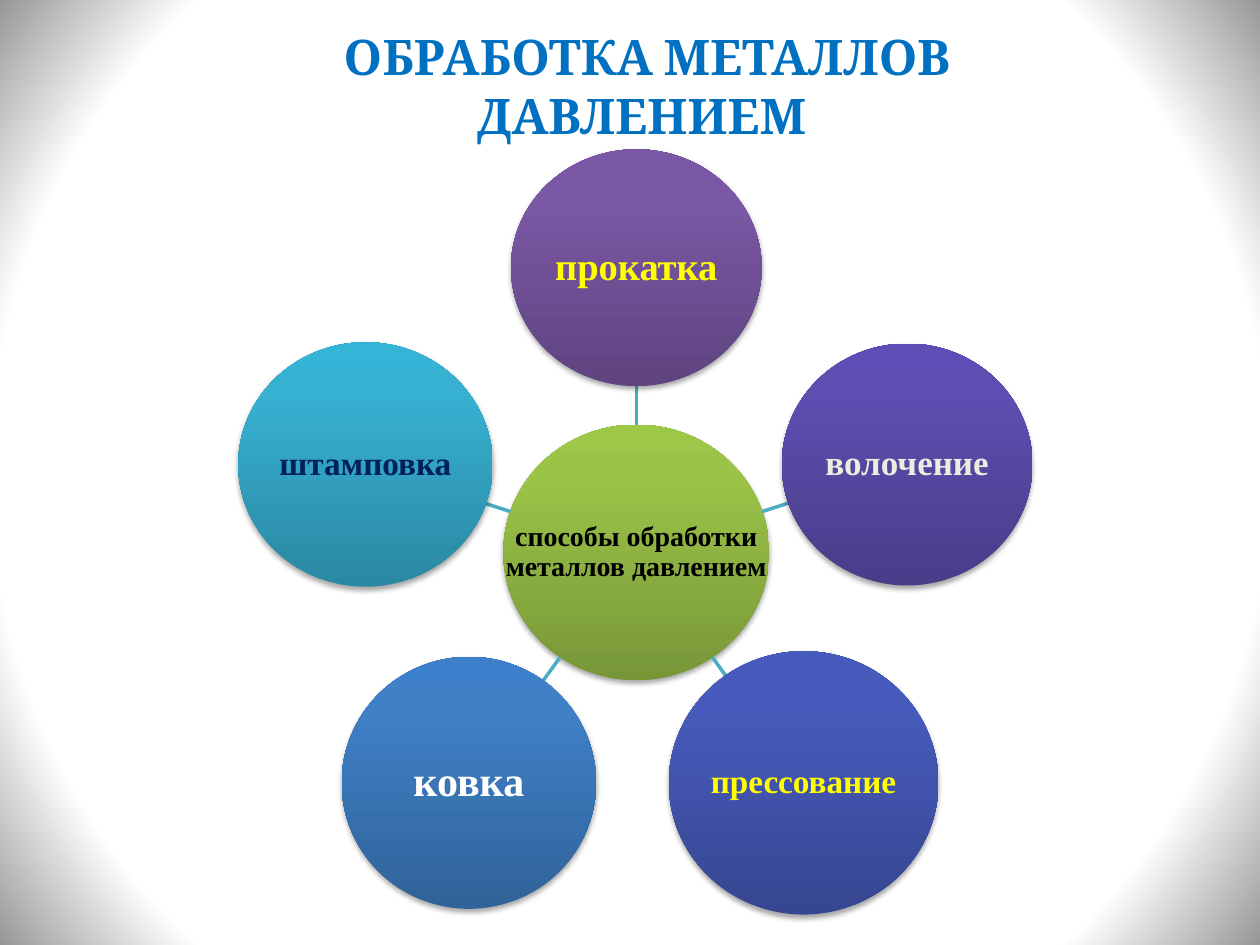
from math import cos, hypot, radians, sin

from lxml import etree
from pptx import Presentation
from pptx.dml.color import RGBColor
from pptx.enum.shapes import MSO_CONNECTOR, MSO_SHAPE
from pptx.enum.text import MSO_ANCHOR, PP_ALIGN
from pptx.oxml import parse_xml
from pptx.oxml.ns import nsdecls, qn
from pptx.util import Inches, Pt

OVAL = MSO_SHAPE.OVAL
STRAIGHT = MSO_CONNECTOR.STRAIGHT
CENTER = PP_ALIGN.CENTER
MIDDLE = MSO_ANCHOR.MIDDLE

BLUE = RGBColor(0x00, 0x70, 0xC0)
TEAL = RGBColor(0x4B, 0xAC, 0xC6)
YELLOW = RGBColor(0xFF, 0xFF, 0x00)
CREAM = RGBColor(0xEE, 0xEC, 0xE1)
NAVY = RGBColor(0x00, 0x20, 0x60)
BLACK = RGBColor(0x00, 0x00, 0x00)
WHITE = RGBColor(0xFF, 0xFF, 0xFF)
GREY = RGBColor(0x97, 0x97, 0x97)

GREENS = [RGBColor.from_string(c) for c in ("779737", "9BC348", "9DC746")]
PURPLES = [RGBColor.from_string(c) for c in ("5F4480", "7B58A6", "7C57A8")]
VIOLETS = [RGBColor.from_string(c) for c in ("483D89", "5D4FB1", "5C4EB4")]
INDIGOS = [RGBColor.from_string(c) for c in ("374691", "475BBC", "455ABF")]
BLUES = [RGBColor.from_string(c) for c in ("306399", "3F80C7", "3C80CB")]
CYANS = [RGBColor.from_string(c) for c in ("2A88A2", "37B1D2", "34B4D6")]

UPWARD = '<a:lin {} ang="16200000" scaled="0"/>'
RADIAL = ('<a:path {} path="circle"><a:fillToRect l="50000" t="50000" '
          'r="50000" b="50000"/></a:path>')
SHADOW = ('<a:outerShdw {} blurRad="39370" dist="22860" dir="5400000" '
          'rotWithShape="0"><a:srgbClr val="000000"><a:alpha val="35000"/>'
          '</a:srgbClr></a:outerShdw>')

HUB_CENTER = (5.05, 4.385)
HUB_SIZE = (2.11, 2.03)
ORBIT = 2.26
# label, text size, text colour, gradient, circle size; clockwise from the top
METHODS = [
    ("прокатка", 22, YELLOW, PURPLES, (1.99, 1.88)),
    ("волочение", 20, CREAM, VIOLETS, (1.99, 1.92)),
    ("прессование", 19, YELLOW, INDIGOS, (2.14, 2.09)),
    ("ковка", 24, WHITE, BLUES, (2.02, 2.0)),
    ("штамповка", 19, NAVY, CYANS, (2.02, 1.94)),
]


def set_gradient(fill, owner, stops, direction):
    """Give the fill any number of (percent, colour) stops."""
    fill.gradient()
    gradient = next(owner.iter(qn("a:gradFill")))
    for child in list(gradient):
        gradient.remove(child)
    stop_list = etree.SubElement(gradient, qn("a:gsLst"))
    for percent, color in stops:
        stop = etree.SubElement(stop_list, qn("a:gs"), pos=str(percent * 1000))
        etree.SubElement(stop, qn("a:srgbClr"), val=str(color))
    gradient.append(parse_xml(direction.format(nsdecls("a"))))


def edge_distance(size, angle):
    """Distance from an ellipse's centre to its edge along the angle."""
    width, height = size
    return 1 / hypot(2 * cos(angle) / width, 2 * sin(angle) / height)


def along(angle, distance):
    """Point at the distance from the hub's centre."""
    x, y = HUB_CENTER
    return x + distance * cos(angle), y + distance * sin(angle)


class RadialSlide:
    label_font = "Times New Roman"
    title_font = "Cambria"

    def __init__(self, slide):
        self.slide = slide

    def background(self, stops):
        set_gradient(self.slide.background.fill, self.slide.element, stops, RADIAL)

    def bold_run(self, paragraph, text, font, size, color):
        run = paragraph.add_run()
        run.text = text
        run.font.name = font
        run.font.size = Pt(size)
        run.font.bold = True
        run.font.color.rgb = color

    def title(self, text, left, top, width, height):
        title = self.slide.shapes.title
        title.left, title.top = Inches(left), Inches(top)
        title.width, title.height = Inches(width), Inches(height)
        title.text_frame.vertical_anchor = MIDDLE
        paragraph = title.text_frame.paragraphs[0]
        paragraph.alignment = CENTER
        self.bold_run(paragraph, text, self.title_font, 28, BLUE)

    def circle(self, center, size, colors, lines, text_size, text_color):
        (x, y), (width, height) = center, size
        circle = self.slide.shapes.add_shape(
            OVAL, Inches(x - width / 2), Inches(y - height / 2),
            Inches(width), Inches(height))
        properties = circle.element.spPr
        set_gradient(circle.fill, properties, zip((0, 80, 100), colors), UPWARD)
        circle.line.fill.background()
        circle.shadow.inherit = False
        properties.find(qn("a:effectLst")).append(
            parse_xml(SHADOW.format(nsdecls("a"))))

        frame = circle.text_frame
        frame.word_wrap = False
        frame.vertical_anchor = MIDDLE
        frame.margin_left = frame.margin_right = Inches(0.01)
        frame.margin_top = frame.margin_bottom = Inches(0.01)
        paragraph = frame.paragraphs[0]
        paragraph.alignment = CENTER
        paragraph.line_spacing = 0.9
        for number, line in enumerate(lines):
            if number:
                paragraph.add_line_break()
            self.bold_run(paragraph, line, self.label_font, text_size, text_color)

    def spoke(self, start, end):
        spoke = self.slide.shapes.add_connector(
            STRAIGHT, *(Inches(value) for value in (*start, *end)))
        spoke.line.color.rgb = TEAL
        spoke.line.width = Pt(2)
        etree.SubElement(spoke.element.spPr, qn("a:effectLst"))


def main():
    deck = Presentation()
    deck.slide_width, deck.slide_height = Inches(10), Inches(7.5)
    page = RadialSlide(deck.slides.add_slide(deck.slide_layouts[5]))
    page.background([(81, WHITE), (100, GREY)])
    page.title("ОБРАБОТКА МЕТАЛЛОВ ДАВЛЕНИЕМ ", 2.4, 0.21, 5.47, 0.94)

    page.circle(HUB_CENTER, HUB_SIZE, GREENS,
                ["способы обработки", "металлов давлением"], 16, BLACK)
    for position, (label, text_size, color, colors, size) in enumerate(METHODS):
        angle = radians(-90 + position * 360 / len(METHODS))
        page.spoke(along(angle, edge_distance(HUB_SIZE, angle)),
                   along(angle, ORBIT - edge_distance(size, angle)))
        page.circle(along(angle, ORBIT), size, colors, [label], text_size, color)

    deck.save("out.pptx")


if __name__ == "__main__":
    main()
